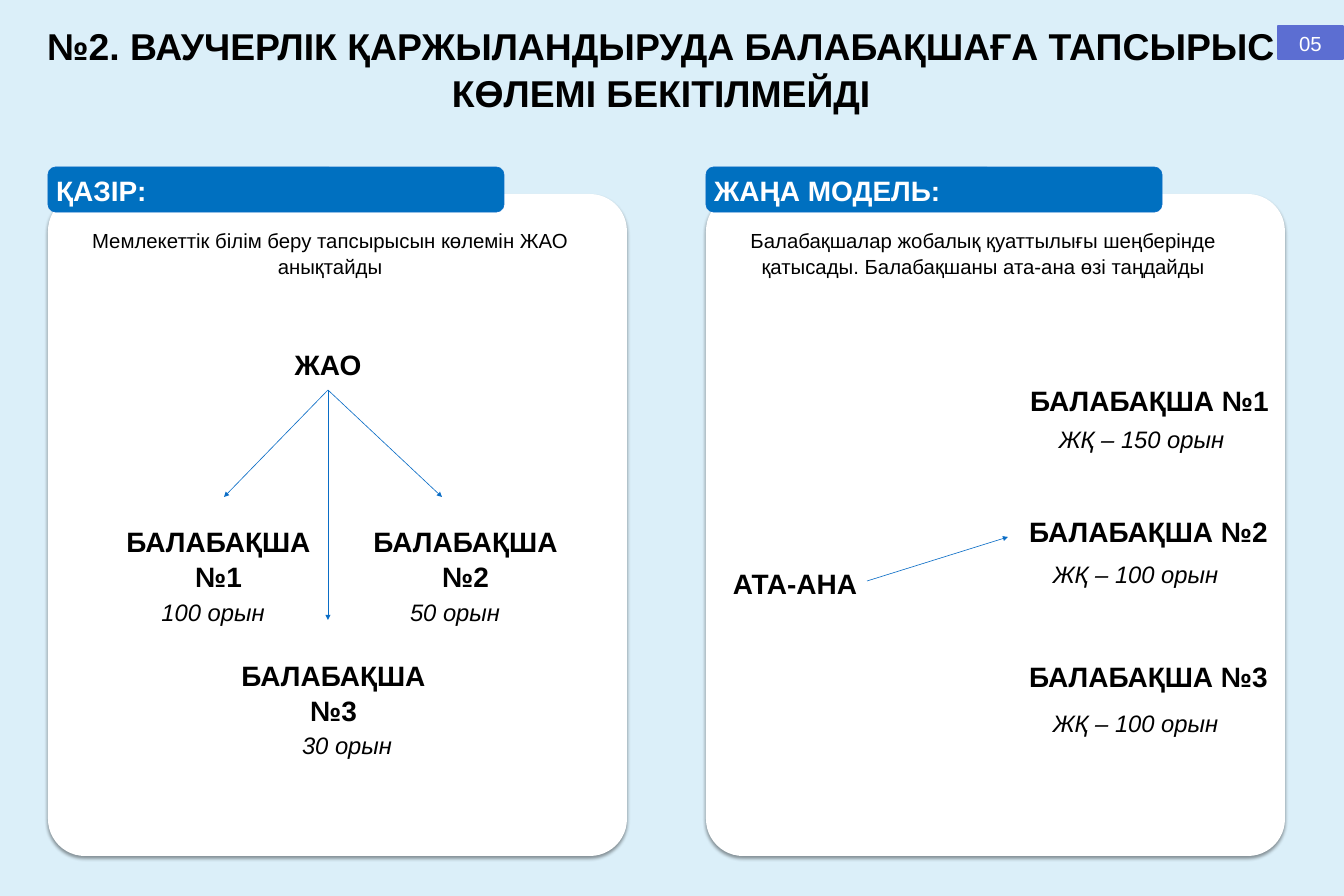
from lxml import etree
from pptx import Presentation
from pptx.dml.color import RGBColor
from pptx.enum.shapes import MSO_CONNECTOR, MSO_SHAPE
from pptx.enum.text import MSO_ANCHOR, PP_ALIGN
from pptx.oxml.ns import qn
from pptx.util import Pt

PX = 14966  # EMU per px
COLORS = {"background": "DBEFF9", "panel": "FFFFFF", "header": "0070C0",
          "line": "0A6DC6", "badge": "5C6ED2", "dark": "000000", "light": "FFFFFF"}

TITLE = "№2. ВАУЧЕРЛІК ҚАРЖЫЛАНДЫРУДА БАЛАБАҚШАҒА ТАПСЫРЫС КӨЛЕМІ БЕКІТІЛМЕЙДІ"
PAGE = "05"
# panel left, header, description, description left
PANELS = [
    (48, "ҚАЗІР:", "Мемлекеттік білім беру тапсырысын көлемін ЖАО анықтайды", 59),
    (706, "ЖАҢА МОДЕЛЬ:", "Балабақшалар жобалық қуаттылығы шеңберінде қатысады. "
                          "Балабақшаны ата-ана өзі таңдайды", 712),
]
# text, left, top, width, height
NAMES = [
    ("ЖАО", 271, 343, 114, 40),
    ("БАЛАБАҚША №1", 109, 520, 219, 74),
    ("БАЛАБАҚША №2", 356, 520, 219, 74),
    ("БАЛАБАҚША №3", 224, 654, 219, 74),
    ("АТА-АНА", 721, 562, 148, 40),
    ("БАЛАБАҚША №1", 1017, 379, 265, 40),
    ("БАЛАБАҚША №2", 1017, 510, 263, 40),
    ("БАЛАБАҚША №3", 1017, 655, 263, 40),
]
PLACES = [
    ("100 орын", 142, 593, 142, 35),
    ("50 орын", 384, 593, 142, 35),
    ("30 орын", 276, 726, 142, 35),
    ("ЖҚ – 150 орын", 1051, 420, 181, 35),
    ("ЖҚ – 100 орын", 1045, 555, 181, 35),
    ("ЖҚ – 100 орын", 1045, 704, 181, 35),
]
# start point, end points
ARROWS = [
    ((328, 390), [(224, 497), (442, 497), (328, 620)]),
    ((867, 581), [(1008, 537)]),
]


def emu(*lengths):
    return [round(n * PX) for n in lengths]


def rgb(name):
    return RGBColor.from_string(COLORS[name])


def write(sp, text, size, color="dark", bold=False, italic=False,
          align=PP_ALIGN.CENTER, anchor=MSO_ANCHOR.TOP):
    tf = sp.text_frame
    tf.word_wrap = True
    tf.vertical_anchor = anchor
    tf.margin_left, tf.margin_right, tf.margin_top, tf.margin_bottom = emu(6, 6, 3, 3)
    p = tf.paragraphs[0]
    p.alignment = align
    p.line_spacing = 1.05
    r = p.add_run()
    r.text = text
    font = r.font
    font.name, font.size, font.bold, font.italic = "Arial", Pt(size), bold, italic
    font.color.rgb = rgb(color)


def add_text(text, left, top, width, height, size, **style):
    sp = slide.shapes.add_textbox(*emu(left, top, width, height))
    write(sp, text, size, **style)


def add_box(kind, left, top, width, height, fill, line=None, weight=0.75):
    sp = slide.shapes.add_shape(kind, *emu(left, top, width, height))
    sp.shadow.inherit = False
    sp.fill.solid()
    sp.fill.fore_color.rgb = rgb(fill)
    if line:
        sp.line.color.rgb = rgb(line)
        sp.line.width = Pt(weight)
    else:
        sp.line.fill.background()
    return sp


def add_shadow(sp):
    """Soft 40% black shadow straight below the shape."""
    effects = sp._element.spPr.find(qn("a:effectLst"))
    shadow = etree.SubElement(effects, qn("a:outerShdw"), blurRad=str(Pt(4)),
                              dist=str(Pt(3)), dir="5400000", rotWithShape="0")
    color = etree.SubElement(shadow, qn("a:srgbClr"), val=COLORS["dark"])
    etree.SubElement(color, qn("a:alpha"), val="40000")


def add_arrow(start, end):
    c = slide.shapes.add_connector(MSO_CONNECTOR.STRAIGHT, *emu(*start, *end))
    c.line.color.rgb = rgb("line")
    c.line.width = Pt(0.75)
    etree.SubElement(c.line._get_or_add_ln(), qn("a:tailEnd"), type="triangle")
    etree.SubElement(c._element.spPr, qn("a:effectLst"))


prs = Presentation()
prs.slide_width, prs.slide_height = emu(1344, 896)
slide = prs.slides.add_slide(prs.slide_layouts[5])
slide.background.fill.solid()
slide.background.fill.fore_color.rgb = rgb("background")

title = slide.shapes.title
title.left, title.top, title.width, title.height = emu(10, 18, 1303, 97)
write(title, TITLE, 44, bold=True)

for left, header, description, text_left in PANELS:
    panel = add_box(MSO_SHAPE.ROUNDED_RECTANGLE, left, 194, 579, 662, "panel")
    panel.adjustments[0] = 0.064
    add_shadow(panel)
    sp = add_box(MSO_SHAPE.ROUNDED_RECTANGLE, left, 167, 456, 45, "header", "line")
    write(sp, header, 33, color="light", bold=True, align=PP_ALIGN.LEFT,
          anchor=MSO_ANCHOR.MIDDLE)
    add_text(description, text_left, 224, 542, 56, 24)

for name in NAMES:
    add_text(*name, 33, bold=True)
for place in PLACES:
    add_text(*place, 28, italic=True)
for start, ends in ARROWS:
    for end in ends:
        add_arrow(start, end)

badge = add_box(MSO_SHAPE.RECTANGLE, 1278, 26, 65, 33, "badge", "badge", 2)
write(badge, PAGE, 24, color="light", anchor=MSO_ANCHOR.MIDDLE)

prs.save("out.pptx")
